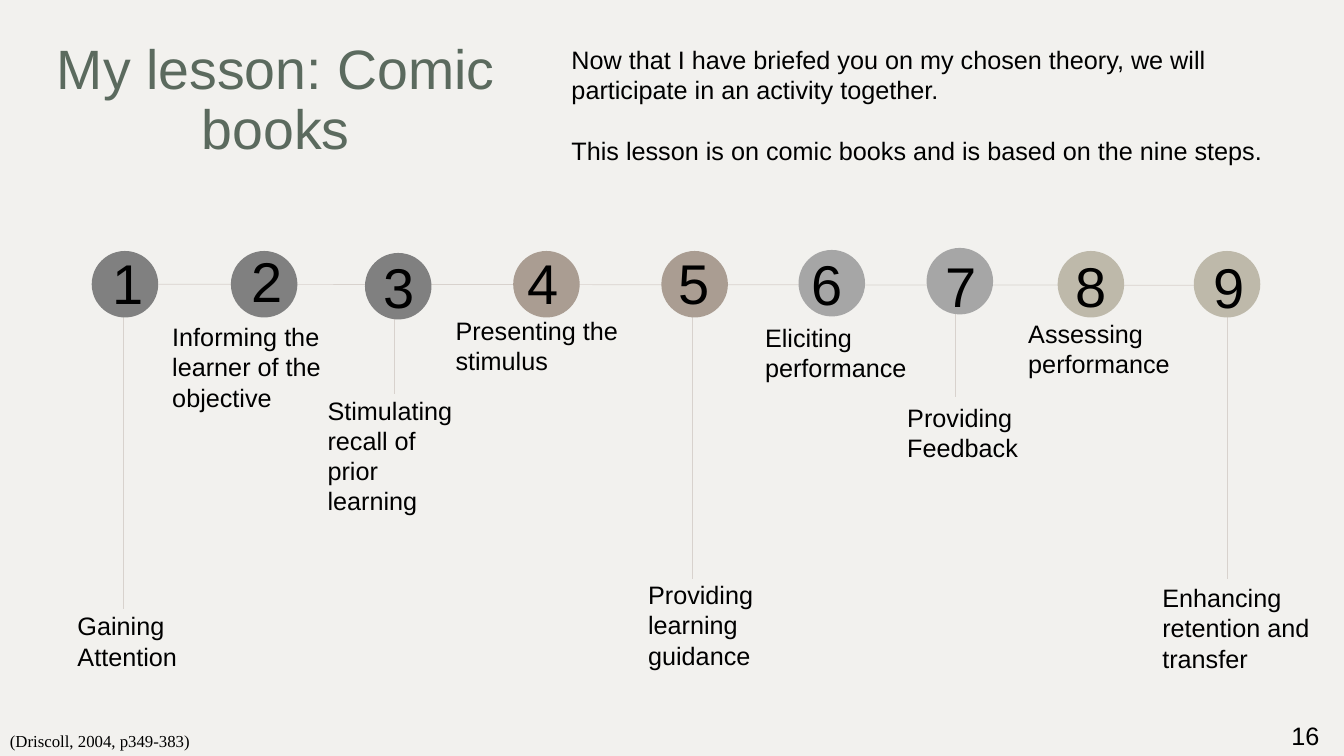
"""Builds a slide with a nine-step lesson timeline."""
from lxml import etree
from pptx import Presentation
from pptx import util as u
from pptx.dml.color import RGBColor
from pptx.enum import shapes, text
from pptx.oxml import ns

PAPER = RGBColor(0xF2, 0xF1, 0xEE)
GREEN = RGBColor(0x5B, 0x6A, 0x5E)
BLACK = RGBColor(0, 0, 0)
RULE = RGBColor(0xD8, 0xD2, 0xCD)
GRAY = RGBColor(0x80, 0x80, 0x80)
TAUPE = RGBColor(0xAA, 0x9D, 0x92)
SILVER = RGBColor(0xA6, 0xA6, 0xA6)
SAND = RGBColor(0xBE, 0xB9, 0xAA)

DOT = 0.66
STEPS = [
    (GRAY, (0.91, 2.49), (0.99, 2.42), (0.67, 6.01, 1.72, 0.71), "Gaining Attention"),
    (GRAY, (2.29, 2.49), (2.37, 2.4), (1.61, 3.14, 1.95, 1.01), "Informing the learner of the objective"),
    (GRAY, (3.62, 2.51), (3.68, 2.46), (3.15, 3.87, 1.62, 1.31), "Stimulating recall of prior learning"),
    (TAUPE, (5.09, 2.49), (5.11, 2.42), (4.42, 3.08, 2.13, 0.71), "Presenting the stimulus"),
    (TAUPE, (6.56, 2.49), (6.6, 2.42), (6.33, 5.7, 1.76, 1.01), "Providing learning guidance"),
    (SILVER, (7.92, 2.48), (7.92, 2.43), (7.49, 3.15, 1.94, 0.71), "Eliciting performance"),
    (SILVER, (9.19, 2.46), (9.25, 2.45), (8.9, 3.94, 1.83, 0.71), "Providing Feedback"),
    (SAND, (10.49, 2.49), (10.54, 2.45), (10.1, 3.11, 1.83, 0.71), "Assessing performance"),
    (SAND, (11.84, 2.49), (11.91, 2.46), (11.43, 5.73, 1.9, 1.01), "Enhancing retention and transfer"),
]
STEMS = [(1.22, 3.14, 6.04), (3.91, 2.81, 3.91), (6.87, 2.84, 5.74),
         (9.48, 2.84, 3.94), (12.17, 2.84, 5.74)]
INTRO = [
    "Now that I have briefed you on my chosen theory, we will participate in an activity together.",
    "This lesson is on comic books and is based on the nine steps.",
]


class Deck:
    """Holds the text style and the current slide."""

    def __init__(self, slide, font="Arial", size=18, color=BLACK):
        self.slide, self.font, self.size, self.color = slide, font, size, color
        fill = slide.background.fill
        fill.solid()
        fill.fore_color.rgb = PAPER

    def line(self, x1, y1, x2, y2):
        """Draws a thin rule."""
        ends = [u.Inches(v) for v in (x1, y1, x2, y2)]
        rule = self.slide.shapes.add_connector(shapes.MSO_CONNECTOR.STRAIGHT, *ends)
        rule.line.color.rgb = RULE
        rule.line.width = u.Pt(0.5)
        etree.SubElement(rule._element.spPr, ns.qn("a:effectLst"))

    def dot(self, left, top, color):
        """Draws a timeline circle."""
        side = u.Inches(DOT)
        oval = self.slide.shapes.add_shape(
            shapes.MSO_SHAPE.OVAL, u.Inches(left), u.Inches(top), side, side)
        oval.shadow.inherit = False
        oval.fill.solid()
        oval.fill.fore_color.rgb = color
        oval.line.fill.background()

    def label(self, at, *lines, size=None, font=None, color=None,
              center=False, wrap=True, gap=0):
        """Adds a text box with one paragraph per line."""
        box = self.slide.shapes.add_textbox(*[u.Inches(v) for v in at])
        frame = box.text_frame
        frame.word_wrap = wrap
        for i, words in enumerate(lines):
            para = frame.add_paragraph() if i else frame.paragraphs[0]
            if i:
                para.space_before = u.Pt(gap)
            if center:
                para.alignment = text.PP_ALIGN.CENTER
            run = para.add_run()
            run.text = words
            run.font.name = font or self.font
            run.font.size = u.Pt(size or self.size)
            run.font.color.rgb = color or self.color
        return frame


def main():
    """Builds and saves the slide."""
    show = Presentation()
    show.slide_width, show.slide_height = u.Inches(13.33), u.Inches(7.5)
    deck = Deck(show.slides.add_slide(show.slide_layouts[6]))

    title = deck.label((0.15, 0.32, 5.17, 1.38), "My lesson: Comic books",
                       size=39.6, color=GREEN, center=True)
    title.vertical_anchor = text.MSO_ANCHOR.MIDDLE
    title.paragraphs[0].line_spacing = 0.9

    for x, top, end in STEMS:
        deck.line(x, top, x, end)
    deck.line(1.57, 2.82, 12.17, 2.83)

    for num, (color, dot, digit, place, words) in enumerate(STEPS, 1):
        deck.dot(*dot, color)
        deck.label(place, words)
        deck.label((*digit, 0.56, 0.77), str(num), size=40, center=True, wrap=False)

    deck.label((5.57, 0.39, 7.14, 1.92), *INTRO, gap=21.5)
    deck.label((0, 7.2, 2.67, 0.3), "(Driscoll, 2004, p349-383)",
               size=12, font="Times New Roman")
    deck.label((12.71, 7.1, 0.62, 0.4), "16")
    show.save("out.pptx")


if __name__ == "__main__":
    main()
